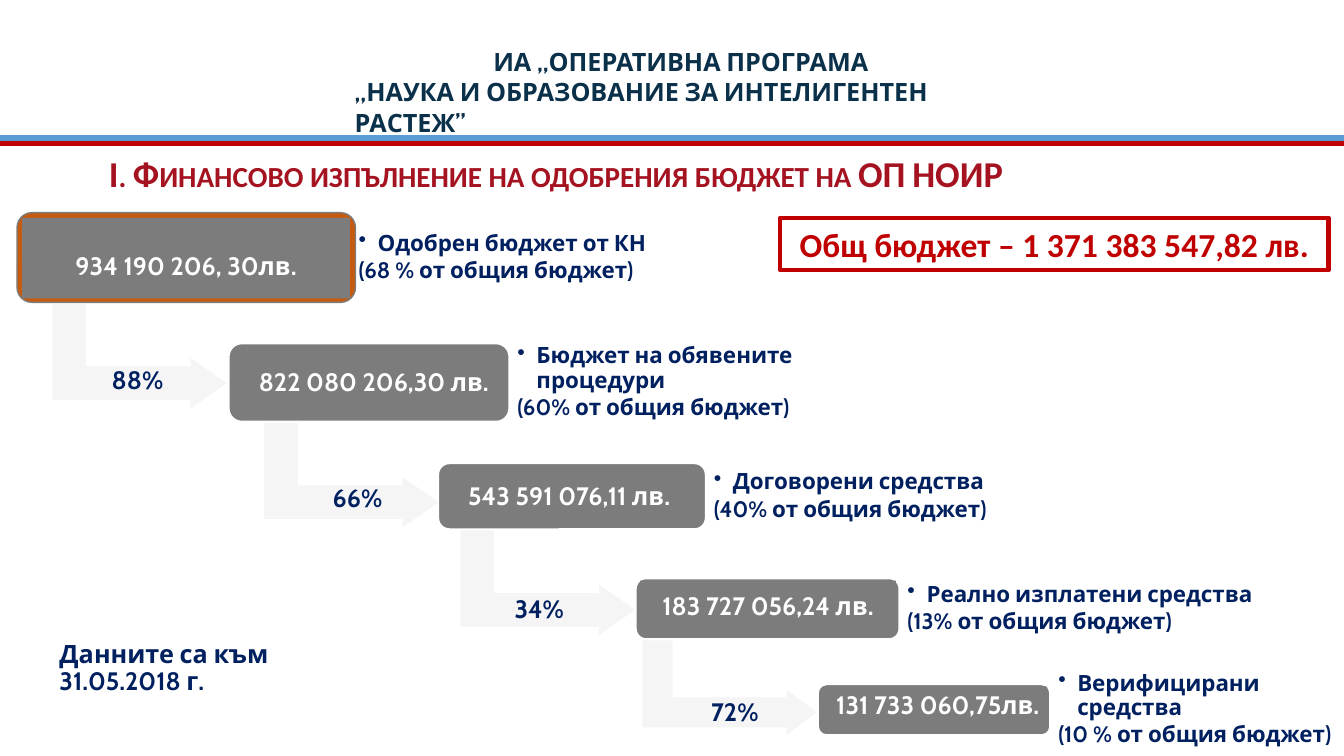
import pptx
import pptx.dml.color
import pptx.enum.shapes
import pptx.enum.text
import pptx.util
from lxml import etree

Cm, Pt = pptx.util.Cm, pptx.util.Pt
SHAPE = pptx.enum.shapes.MSO_SHAPE
ALIGN = pptx.enum.text.PP_ALIGN
MIDDLE = pptx.enum.text.MSO_ANCHOR.MIDDLE
TOP = pptx.enum.text.MSO_ANCHOR.TOP
NS = "http://schemas.openxmlformats.org/drawingml/2006/main"
GREY, WHITE, NAVY, RED = "7C7C7C", "FFFFFF", "002060", "C00000"
SLIDE_W, SLIDE_H = 33.87, 19.05
ARROW_LENGTH = 4.45

STEPS = [
    dict(box=(0.43, 5.36, 8.53, 2.26), fill="C55A11", line=GREY, value="934 190 206, 30лв.",
         value_box=(0.13, 0.13, 8.26, 2.03), value_fill=GREY, spacing=1.5, gap=-0.1,
         label="Одобрен бюджет от КН", share="(68 % от общия бюджет)", label_size=(9.45, 2.01)),
    dict(box=(5.77, 8.66, 7.06, 1.96), value="822 080 206,30 лв.", value_box=(0.22, 0.1, 6.86, 1.78),
         label="Бюджет на обявените процедури", share="(60% от общия бюджет)", label_size=(10.62, 1.35)),
    dict(box=(11.05, 11.68, 6.73, 1.65), value="543 591 076,11 лв.", value_box=(0.3, 0.11, 5.99, 1.47),
         label="Договорени средства", share="(40% от общия бюджет)", label_size=(8.84, 1.42)),
    dict(box=(16.03, 14.58, 6.63, 1.52), value="183 727 056,24 лв.", value_box=(0.1, 0.05, 6.45, 1.37),
         value_fill=GREY, label="Реално изплатени средства", share="(13% от общия бюджет)",
         label_size=(9.17, 1.35)),
    dict(box=(20.62, 17.25, 5.84, 1.27), value="131 733 060,75лв.", value_box=(0.26, 0.05, 5.51, 0.99),
         value_fill=GREY, label="Верифицирани средства", share="(10 % от общия бюджет)",
         label_size=(7.37, 1.83)),
]
ARROWS = [
    dict(dx=0.87, drop=2.69, text="88%", text_box=(0.73, 1.41, 2.87, 1.02)),
    dict(dx=0.87, drop=2.69, text="66%", text_box=(1.01, 1.38, 2.72, 1.02)),
    dict(dx=0.54, drop=2.69, text="34%", text_box=(0.63, 1.48, 2.74, 1.02)),
    dict(dx=0.14, drop=2.44, text="72%", text_box=(0.98, 1.3, 2.74, 1.02), head=0.334),
]


def rgb(value):
    """Turn a hex string into a colour."""
    return pptx.dml.color.RGBColor.from_string(value)


def paint(sp, fill=None, line=None, width=1):
    """Set the fill and outline of a shape."""
    if fill:
        sp.fill.solid()
        sp.fill.fore_color.rgb = rgb(fill)
    if line:
        sp.line.color.rgb = rgb(line)
        sp.line.width = Pt(width)


def add_run(p, text, size, color, font="Cabin"):
    """Add a bold run to a paragraph."""
    r = p.add_run()
    r.text = text
    r.font.name, r.font.size, r.font.bold = font, Pt(size), True
    r.font.color.rgb = rgb(color)
    return r


def add_text(s, box, lines, size, color, font="Cabin", align=None, anchor=MIDDLE,
             inset=(0.25, 0.13), spacing=None, after=None):
    """Add a wrapped text box with one paragraph per line."""
    sp = s.shapes.add_textbox(*map(Cm, box))
    tf = sp.text_frame
    tf.word_wrap, tf.vertical_anchor = True, anchor
    tf.margin_left = tf.margin_right = Cm(inset[0])
    tf.margin_top = tf.margin_bottom = Cm(inset[1])
    for i, text in enumerate(lines):
        p = tf.add_paragraph() if i else tf.paragraphs[0]
        p.alignment, p.line_spacing = align, spacing
        if after:
            p.space_after = Pt(after)
        add_run(p, text, size, color, font)
    return sp


def add_bullet(p, indent):
    """Give a paragraph a hanging bullet."""
    pPr = p._p.get_or_add_pPr()
    pPr.set("marL", str(Cm(indent)))
    pPr.set("indent", str(-Cm(indent)))
    etree.SubElement(pPr, f"{{{NS}}}buChar", char="•")


def add_header(s, box):
    """Place the programme name and the two rules under it."""
    for y, color in ((3.48, "5B9BD5"), (3.61, RED)):
        c = s.shapes.add_connector(pptx.enum.shapes.MSO_CONNECTOR.STRAIGHT,
                                   0, Cm(y), Cm(SLIDE_W), Cm(y))
        paint(c, line=color, width=3.75)
        etree.SubElement(c._element.spPr, f"{{{NS}}}effectLst")
    sp = add_text(s, box, ["ИА „ОПЕРАТИВНА ПРОГРАМА", "„НАУКА И ОБРАЗОВАНИЕ ЗА ИНТЕЛИГЕНТЕН РАСТЕЖ”"],
                  18, "0A304A", anchor=TOP)
    sp.text_frame.paragraphs[0].alignment = ALIGN.CENTER


def add_title(s, box):
    """Move and format the title placeholder."""
    sp = s.shapes.title
    sp.left, sp.top, sp.width, sp.height = map(Cm, box)
    tf = sp.text_frame
    tf.word_wrap, tf.vertical_anchor = True, MIDDLE
    p = tf.paragraphs[0]
    p.alignment, p.line_spacing = ALIGN.LEFT, 0.9
    r = add_run(p, "I. Финансово изпълнение на одобрения бюджет на ОП НОИР", 26, "A51321", "Calibri")
    r.font._element.set("cap", "small")


def add_step(s, box, value, value_box, label, share, label_size, fill=GREY, line=WHITE,
             value_fill=None, spacing=0.9, gap=0.03):
    """Draw one budget stage with its amount inside and its label to the right."""
    left, top, width, height = box
    sp = s.shapes.add_shape(SHAPE.ROUNDED_RECTANGLE, *map(Cm, box))
    sp.shadow.inherit = False
    paint(sp, fill, line)
    dx, dy, w, h = value_box
    sp = add_text(s, (left + dx, top + dy, w, h), [value], 18, WHITE, align=ALIGN.CENTER,
                  inset=(0.1, 0.1), spacing=spacing)
    paint(sp, value_fill)
    w, h = label_size
    sp = add_text(s, (left + width + gap, top + (height - h) / 2, w, h), [label, share], 16, NAVY,
                  inset=(0.18, 0.18), spacing=0.9, after=2.4)
    add_bullet(sp.text_frame.paragraphs[0], 0.48)


def add_arrow(s, box, dx, drop, text, text_box, head=0.358):
    """Draw the bent arrow leaving the bottom of a stage, with its percentage."""
    left, top = box[0] + dx, box[1] + box[3] + 0.02
    shift = (ARROW_LENGTH - drop) / 2
    sp = s.shapes.add_shape(SHAPE.BENT_UP_ARROW, Cm(left + shift), Cm(top - shift),
                            Cm(drop), Cm(ARROW_LENGTH))
    sp.rotation = 90
    sp.shadow.inherit = False
    for i, value in enumerate((0.328, 0.25, head)):
        sp.adjustments[i] = value
    paint(sp, "F5F5F5", WHITE)
    x, y, w, h = text_box
    add_text(s, (left + x, top + y, w, h), [text], 18, NAVY, align=ALIGN.CENTER, anchor=TOP)


def add_total(s, box):
    """Place the framed total budget."""
    sp = add_text(s, box, ["Общ бюджет – 1 371 383 547,82 лв."], 24, RED, "Calibri", ALIGN.CENTER)
    paint(sp, WHITE, RED, 3)


def main():
    """Build the slide and save it."""
    prs = pptx.Presentation()
    prs.slide_width, prs.slide_height = Cm(SLIDE_W), Cm(SLIDE_H)
    s = prs.slides.add_slide(prs.slide_layouts[5])
    add_header(s, (8.69, 1.04, 16.94, 1.8))
    add_title(s, (2.49, 3.76, 30.89, 1.35))
    for step, arrow in zip(STEPS, ARROWS):
        add_arrow(s, step["box"], **arrow)
    for step in STEPS:
        add_step(s, **step)
    add_total(s, (19.66, 5.49, 13.82, 1.32))
    add_text(s, (1.32, 16.18, 8.51, 1.35), ["Данните са към 31.05.2018 г."], 18, NAVY,
             inset=(0.18, 0.18), spacing=0.9)
    prs.save("out.pptx")


if __name__ == "__main__":
    main()
